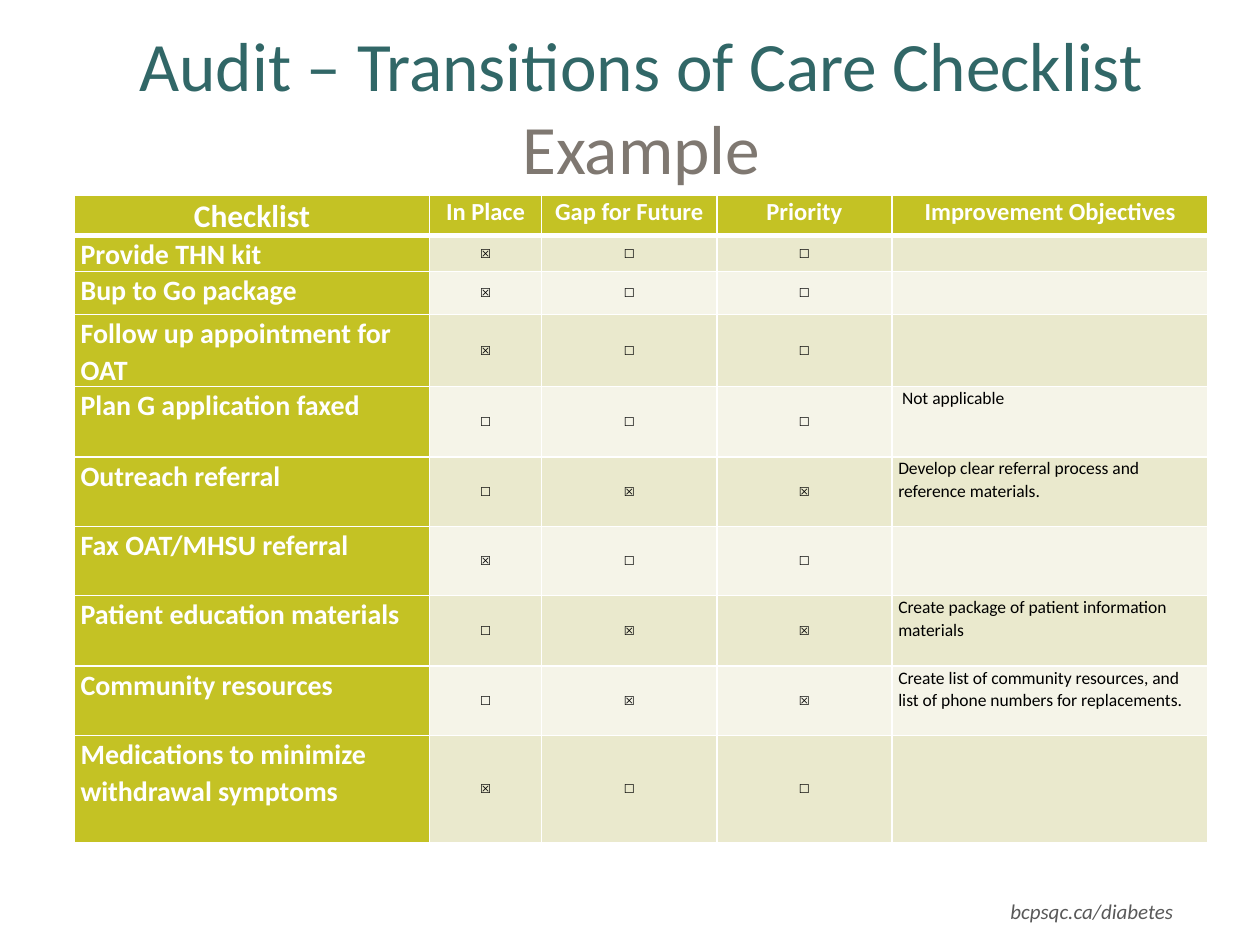
"""Build the Transitions of Care audit checklist slide."""
from lxml.etree import SubElement
from pptx import Presentation
from pptx.dml.color import RGBColor
from pptx.enum.text import MSO_ANCHOR, PP_ALIGN
from pptx.oxml.ns import qn
from pptx.util import Inches, Pt

deck = Presentation()
deck.slide_width, deck.slide_height = Inches(10), Inches(7.5)
slide = deck.slides.add_slide(deck.slide_layouts[6])
unit = deck.slide_width // 100


def tint(part, shade):
    part.rgb = RGBColor.from_string(shade)


def style(para, size, shade, align, bold=False):
    para.alignment = align
    para.font.name, para.font.size, para.font.bold = "Calibri", Pt(size), bold
    tint(para.font.color, shade)


foot = slide.shapes.add_textbox(73.6 * unit, 70.8 * unit, 20.5 * unit, 3 * unit)
foot.fill.solid()
tint(foot.fill.fore_color, "FFFFFF")
foot.text_frame.word_wrap = True
line = foot.text_frame.paragraphs[0]
line.text = "bcpsqc.ca/diabetes"
style(line, 12, "595959", PP_ALIGN.RIGHT)
line.font.italic = True

title = slide.shapes.add_textbox(5.9 * unit, 2.1 * unit, 90 * unit, 12.5 * unit)
title.text_frame.word_wrap = True
title.text_frame.vertical_anchor = MSO_ANCHOR.MIDDLE
line = title.text_frame.paragraphs[0]
style(line, 39.6, "316767", PP_ALIGN.CENTER)
line.add_run().text = "Audit – Transitions of Care Checklist"
line.add_line_break()
word = line.add_run()
word.text = "Example"
tint(word.font.color, "7F7871")

heads = ["Checklist", "In Place", "Gap for Future", "Priority", "Improvement Objectives"]
items = [
    ("Provide THN kit", True, ""),
    ("Bup to Go package", True, ""),
    ("Follow up appointment for OAT", True, ""),
    ("Plan G application faxed", None, "Not applicable"),
    ("Outreach referral", False, "Develop clear referral process and reference materials."),
    ("Fax OAT/MHSU referral", True, ""),
    ("Patient education materials", False, "Create package of patient information materials"),
    ("Community resources", False,
     "Create list of community resources, and list of phone numbers for replacements."),
    ("Medications to minimize withdrawal symptoms", True, ""),
]
marks = {True: "☒☐☐", False: "☐☒☒", None: "☐☐☐"}
rows = [heads] + [[name, *marks[done], note] for name, done, note in items]
wides = [28.2, 8.9, 13.9, 13.9, 25.1]
highs = [3.1, 2.7, 3.4, 5.6, 5.6, 5.5, 5.5, 5.6, 5.5, 8.5]

frame = slide.shapes.add_table(len(rows), len(wides), 5.9 * unit, 15.5 * unit,
                               90 * unit, 51.1 * unit)
grid = frame.table
for col, wide in zip(grid.columns, wides):
    col.width = int(wide * unit)
for row, high in zip(grid.rows, highs):
    row.height = int(high * unit)

for r, texts in enumerate(rows):
    for c, text in enumerate(texts):
        cell = grid.cell(r, c)
        cell.margin_left = cell.margin_right = unit // 2
        cell.margin_top = cell.margin_bottom = 0
        if text == "Not applicable":
            cell.margin_left = int(0.8 * unit)
        for side in "LRTB":
            thick = (r, side) in [(0, "B"), (1, "T")]
            edge = SubElement(cell._tc.get_or_add_tcPr(), qn("a:ln" + side),
                              w=str(Pt(3 if thick else 1)))
            fill = SubElement(edge, qn("a:solidFill"))
            SubElement(fill, qn("a:srgbClr"), val="FFFFFF")
        cell.fill.solid()
        band = "EAE9CD" if r % 2 else "F5F4E8"
        tint(cell.fill.fore_color, "C4C224" if r == 0 or c == 0 else band)
        line = cell.text_frame.paragraphs[0]
        line.text = text
        line.line_spacing, line.space_after = 1.07, Pt(8)
        if r == 0:
            style(line, 18 if c == 0 else 14, "FFFFFF", PP_ALIGN.CENTER, True)
        elif c == 0:
            style(line, 16, "FFFFFF", PP_ALIGN.LEFT, True)
        elif c < 4:
            style(line, 7, "000000", PP_ALIGN.CENTER)
            cell.vertical_anchor = MSO_ANCHOR.MIDDLE
        else:
            style(line, 10, "000000", PP_ALIGN.LEFT)

deck.save("out.pptx")
